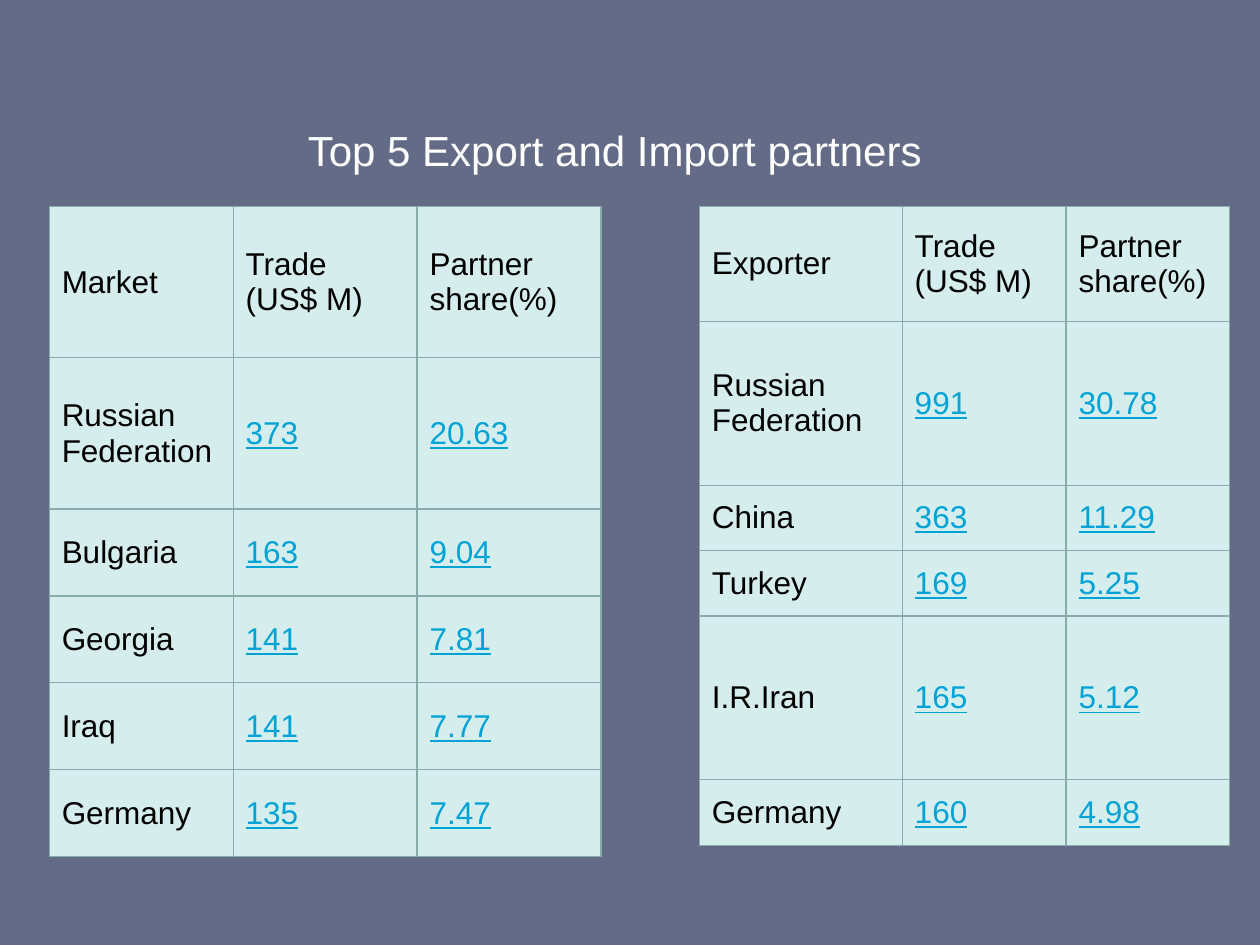
"""Build a slide of two tables with the top export and import partners."""
from dataclasses import dataclass

from lxml import etree
from pptx import Presentation
from pptx.dml.color import RGBColor
from pptx.enum.text import MSO_ANCHOR, PP_ALIGN
from pptx.oxml.ns import qn
from pptx.util import Inches, Pt

MIDDLE = MSO_ANCHOR.MIDDLE
CENTER = PP_ALIGN.CENTER
FONT = "Arial"
BACK, PALE, EDGE = "646B86", "D5EDEC", "88AAAB"
BLACK, WHITE, BLUE = "000000", "FFFFFF", "00A3D6"
TOP = 1.64


@dataclass
class Grid:
    """Place, sizes and wording of one table."""
    left: float
    cols: list[float]
    rows: list[float]
    head: str
    data: list[tuple[str, str, str]]


GRIDS = [
    Grid(0.39, [1.46] * 3, [1.2] * 2 + [0.69] * 4, "Market", [
        ("Russian Federation", "373", "20.63"),
        ("Bulgaria", "163", "9.04"),
        ("Georgia", "141", "7.81"),
        ("Iraq", "141", "7.77"),
        ("Germany", "135", "7.47"),
    ]),
    Grid(5.55, [1.61, 1.3, 1.3], [0.91, 1.3, 0.52, 0.52, 1.3, 0.52], "Exporter", [
        ("Russian Federation", "991", "30.78"),
        ("China", "363", "11.29"),
        ("Turkey", "169", "5.25"),
        ("I.R.Iran", "165", "5.12"),
        ("Germany", "160", "4.98"),
    ]),
]


def paint(fill, color: str) -> None:
    """Make a fill solid in a hex colour."""
    fill.solid()
    fill.fore_color.rgb = RGBColor.from_string(color)


def style(font, size: int, color: str, under: bool = False) -> None:
    """Set the face, size, colour and underline of a font."""
    font.name, font.size, font.bold = FONT, Pt(size), False
    font.underline = under
    font.color.rgb = RGBColor.from_string(color)


def frame(cell) -> None:
    """Draw thin lines on all four sides of a cell."""
    props = cell._tc.get_or_add_tcPr()
    for side in ("lnL", "lnR", "lnT", "lnB"):
        line = etree.SubElement(props, qn(f"a:{side}"), w=str(Pt(0.75)))
        solid = etree.SubElement(line, qn("a:solidFill"))
        etree.SubElement(solid, qn("a:srgbClr"), val=EDGE)


def draw(slide, grid: Grid) -> None:
    """Add one table to the slide."""
    lines = [(grid.head, "Trade (US$ M)", "Partner share(%)"), *grid.data]
    table = slide.shapes.add_table(
        len(lines), len(grid.cols), Inches(grid.left), Inches(TOP),
        Inches(sum(grid.cols)), Inches(sum(grid.rows))).table
    table.first_row = table.horz_banding = False
    for col, width in zip(table.columns, grid.cols):
        col.width = Inches(width)
    for r, (height, line) in enumerate(zip(grid.rows, lines)):
        table.rows[r].height = Inches(height)
        for c, text in enumerate(line):
            cell = table.cell(r, c)
            frame(cell)
            paint(cell.fill, PALE)
            cell.vertical_anchor = MIDDLE
            cell.text_frame.text = text
            value = r > 0 and c > 0
            run = cell.text_frame.paragraphs[0].runs[0]
            style(run.font, 18, BLUE if value else BLACK, value)


def head(slide, text: str) -> None:
    """Fill and place the title."""
    title = slide.shapes.title
    title.left, title.top = Inches(2.23), Inches(0.94)
    title.width, title.height = Inches(5.3), Inches(0.5)
    title.text_frame.text = text
    title.text_frame.vertical_anchor = MIDDLE
    para = title.text_frame.paragraphs[0]
    para.alignment = CENTER
    style(para.runs[0].font, 24, WHITE)


def main() -> None:
    """Build and save the slide."""
    deck = Presentation()
    deck.slide_width, deck.slide_height = Inches(10), Inches(7.5)
    slide = deck.slides.add_slide(deck.slide_layouts[5])
    paint(slide.background.fill, BACK)
    head(slide, "Top 5 Export and Import partners")
    for grid in GRIDS:
        draw(slide, grid)
    deck.save("out.pptx")


if __name__ == "__main__":
    main()
